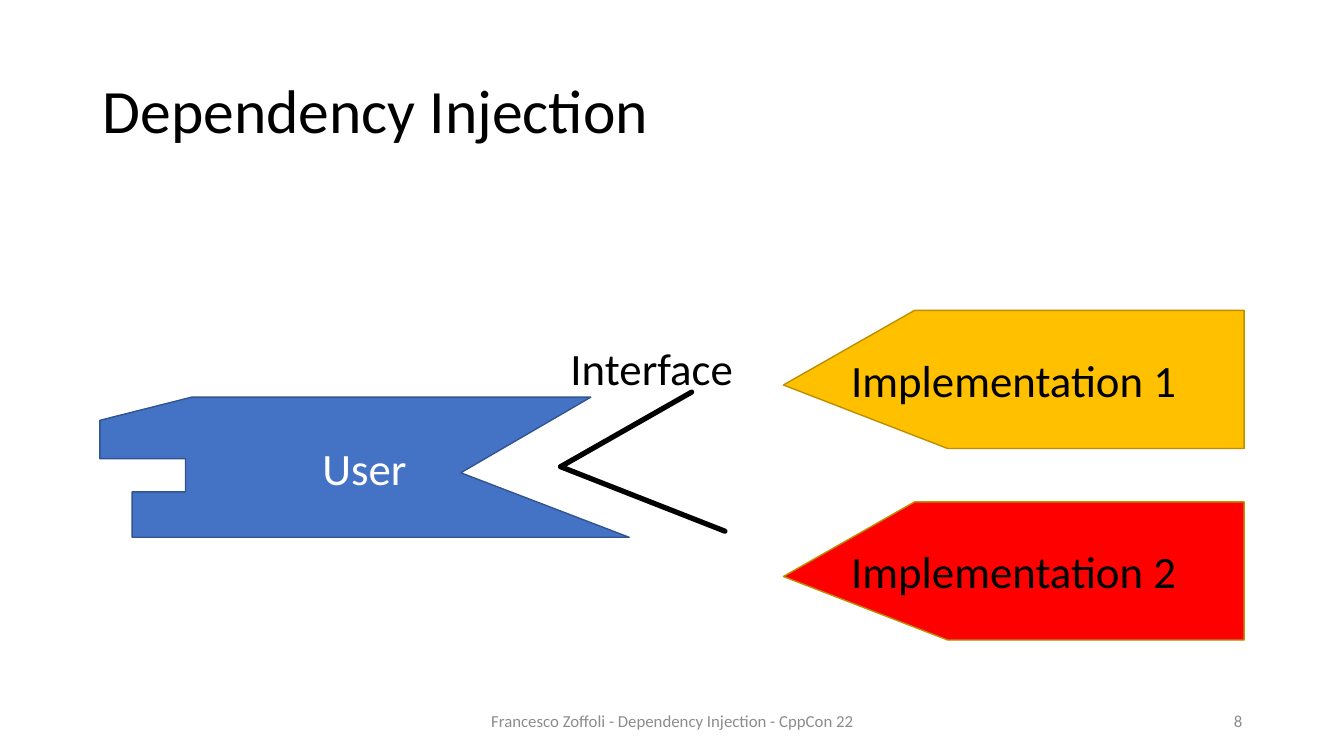
from dataclasses import dataclass

from lxml import etree
from pptx import Presentation
from pptx.dml.color import RGBColor
from pptx.enum import shapes, text
from pptx.oxml import ns
from pptx.util import Inches, Pt


@dataclass(frozen=True)
class Theme:
    font: str = "Calibri"
    title_size: float = 44
    label_size: float = 32
    footer_size: float = 12
    outline: float = 1
    interface_line: float = 3.75
    black: str = "000000"
    white: str = "FFFFFF"
    gray: str = "8C8C8C"
    blue: str = "4472C4"
    blue_edge: str = "325491"
    gold: str = "FFC000"
    gold_edge: str = "BD8E00"
    red: str = "FF0000"


theme = Theme()
LEFT, CENTER, RIGHT = text.PP_ALIGN.LEFT, text.PP_ALIGN.CENTER, text.PP_ALIGN.RIGHT


def write(sp, words, size, color, align=LEFT, anchor=text.MSO_ANCHOR.MIDDLE):
    tf = sp.text_frame
    tf.word_wrap = True
    tf.vertical_anchor = anchor
    p = tf.paragraphs[0]
    p.text = words
    p.alignment = align
    font = p.runs[0].font
    font.name = theme.font
    font.size = Pt(size)
    font.color.rgb = RGBColor.from_string(color)
    return p


def add_piece(points, words, fill, edge, color):
    """Draw a closed, labelled puzzle piece through points given in inches."""
    corners = [(Inches(x), Inches(y)) for x, y in points]
    builder = slide.shapes.build_freeform(*corners[0])
    builder.add_line_segments(corners[1:], close=True)
    sp = builder.convert_to_shape()
    sp.shadow.inherit = False
    sp.fill.solid()
    sp.fill.fore_color.rgb = RGBColor.from_string(fill)
    sp.line.color.rgb = RGBColor.from_string(edge)
    sp.line.width = Pt(theme.outline)
    write(sp, words, theme.label_size, color, CENTER)


prs = Presentation()
prs.slide_width, prs.slide_height = Inches(13.33), Inches(7.5)
slide = prs.slides.add_slide(prs.slide_layouts[6])

# Title
title = slide.shapes.add_textbox(Inches(0.92), Inches(0.4), Inches(11.5), Inches(1.45))
p = write(title, "Dependency Injection", theme.title_size, theme.black)
p.line_spacing = 0.9

# Implementations
arrow = [(9.07, 0), (7.77, 0.74), (9.4, 1.37), (12.34, 1.37), (12.34, 0)]
for i, fill in enumerate((theme.gold, theme.red)):
    top = 3.08 + 1.9 * i
    points = [(x, top + y) for x, y in arrow]
    add_piece(points, f"Implementation {i + 1}", fill, theme.gold_edge, theme.black)

# Interface
interface = slide.shapes.add_group_shape()
for x, y in ((6.86, 3.89), (7.19, 5.27)):
    line = interface.shapes.add_connector(
        shapes.MSO_CONNECTOR.STRAIGHT, Inches(x), Inches(y), Inches(5.56), Inches(4.63))
    line.line.color.rgb = RGBColor.from_string(theme.black)
    line.line.width = Pt(theme.interface_line)
    line.line._get_or_add_ln().set("cap", "rnd")
    etree.SubElement(line._element.spPr, ns.qn("a:effectLst"))

label = slide.shapes.add_textbox(Inches(5.56), Inches(3.33), Inches(2.01), Inches(0.64))
write(label, "Interface", theme.label_size, theme.black, anchor=text.MSO_ANCHOR.TOP)

# User
user = [(5.86, 3.94), (4.57, 4.69), (6.24, 5.33), (1.31, 5.33), (1.31, 4.88),
        (1.84, 4.88), (1.84, 4.55), (0.99, 4.55), (0.99, 4.17), (1.9, 3.94)]
add_piece(user, "User", theme.blue, theme.blue_edge, theme.white)

# Footer
for x, width, words, align in (
        (4.42, 4.5, "Francesco Zoffoli - Dependency Injection - CppCon 22", CENTER),
        (9.42, 3, "8", RIGHT)):
    sp = slide.shapes.add_textbox(Inches(x), Inches(6.95), Inches(width), Inches(0.4))
    write(sp, words, theme.footer_size, theme.gray, align)

prs.save("out.pptx")
